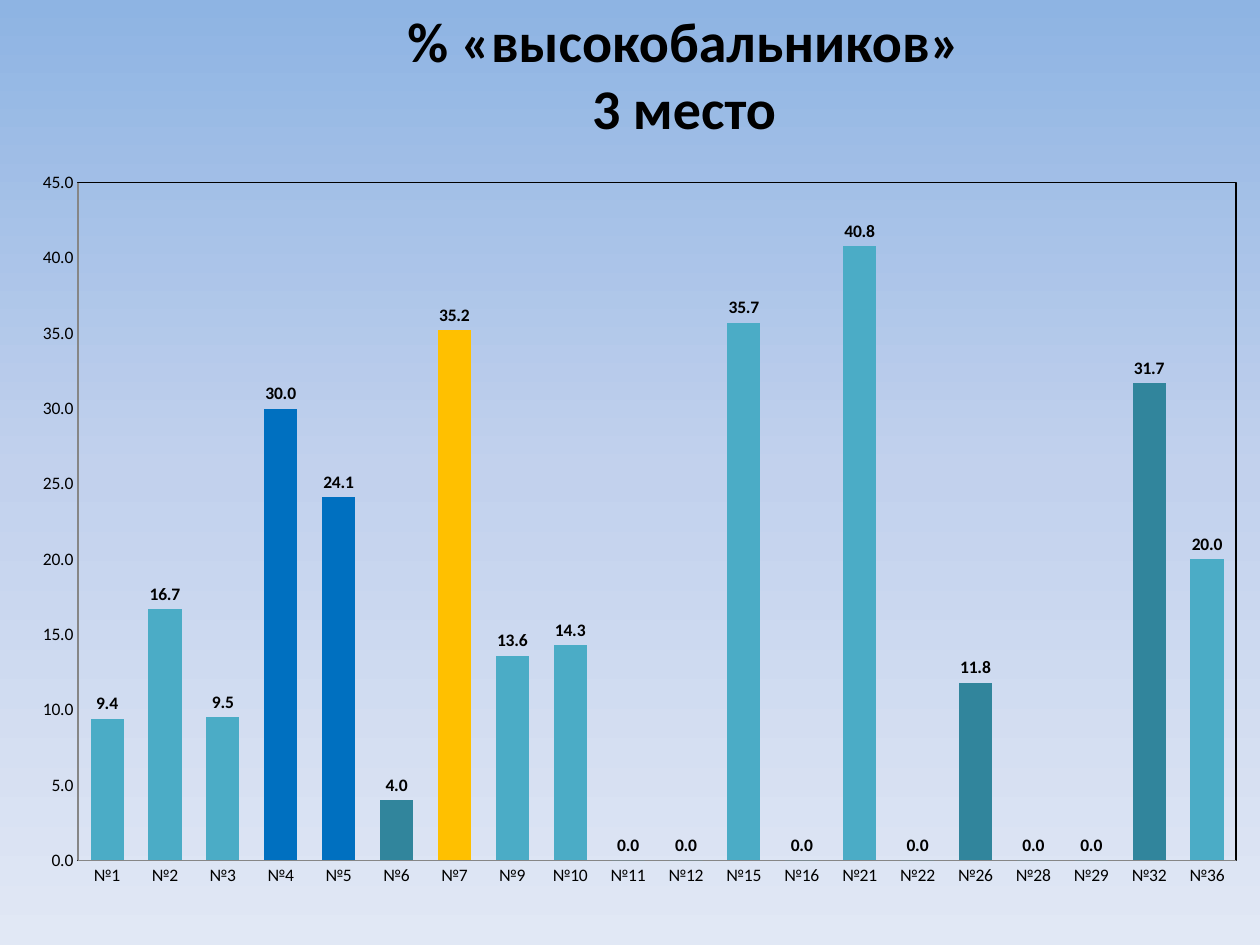
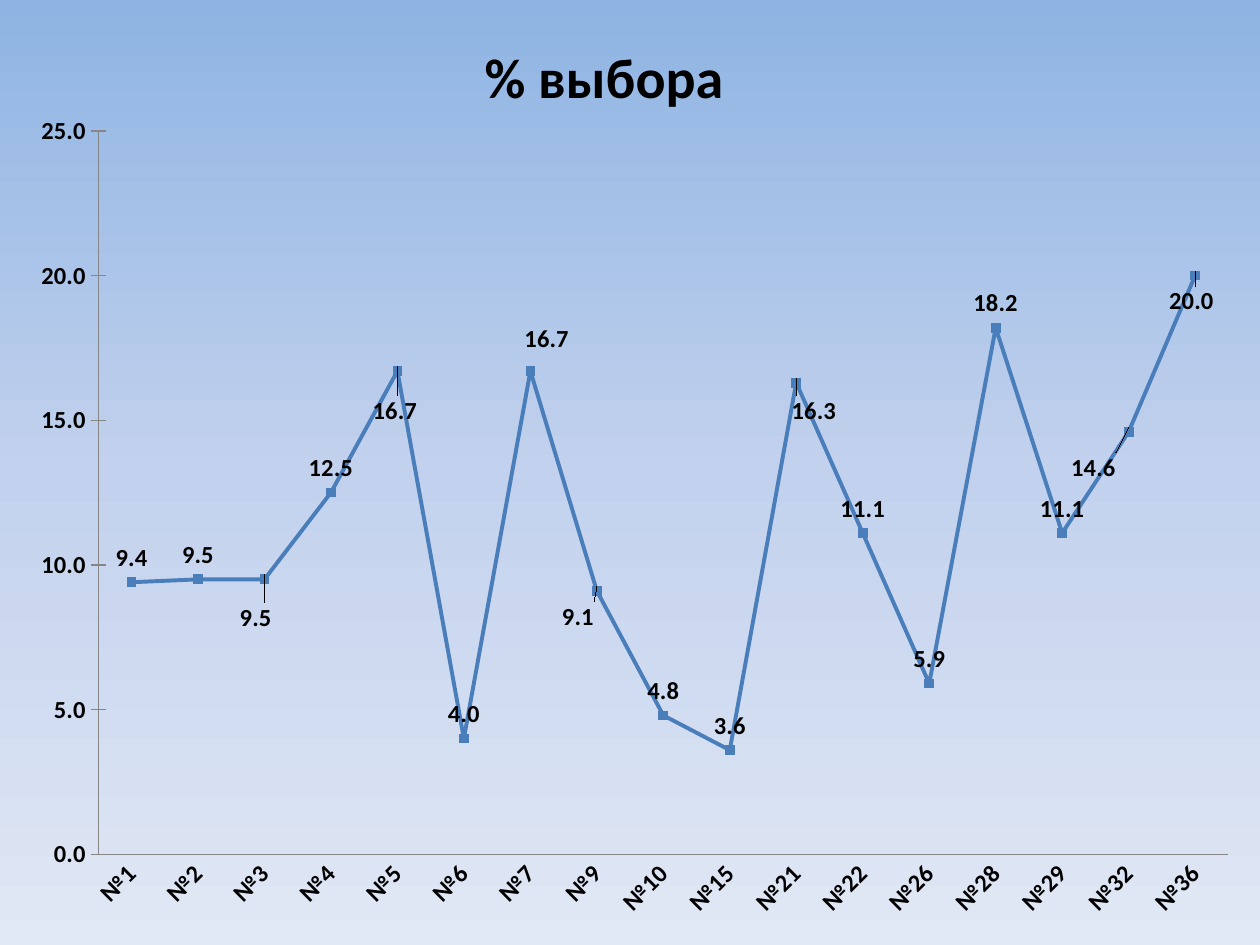
from copy import deepcopy
from dataclasses import dataclass, field

from lxml import etree
from pptx import Presentation
from pptx.chart.data import CategoryChartData
from pptx.dml.color import RGBColor
from pptx.enum import chart as ch, text
from pptx.oxml import parse_xml
from pptx.oxml.ns import nsdecls, qn
from pptx.util import Inches, Pt

FONT = "Calibri"
BLACK, AXIS_GREY = "000000", "868686"
TEAL, DARK_TEAL, BLUE, GOLD = "4BACC6", "31859C", "0070C0", "FFC000"
LINE_BLUE, MARKER_BLUE = "4A7EBB", "4F81BD"
SKY = [(0, "8EB4E3"), (0.5, "C2D1ED"), (1, "E1E8F5")]
NUMBER = "0.0"


@dataclass
class Box:
    x: float
    y: float
    w: float
    h: float

    def inches(self) -> list:
        return [Inches(v) for v in (self.x, self.y, self.w, self.h)]


@dataclass
class ChartSlide:
    title: list[str]
    title_box: Box
    chart_box: Box
    plot: Box  # inner plot area, in inches from the chart's corner
    kind: ch.XL_CHART_TYPE
    values: dict[int, float]  # school number -> percent
    maximum: float
    axis_size: int
    axis_bold: bool
    label_size: int
    label_pos: ch.XL_LABEL_POSITION
    val_tick: ch.XL_TICK_MARK
    point_colours: dict[int, str] = field(default_factory=dict)  # by school
    label_shifts: dict[int, tuple[float, float]] = field(default_factory=dict)


HIGH_SCORERS = ChartSlide(
    ["% «высокобальников»", "3 место"],
    Box(3.11, 0, 4.64, 1.18), Box(0, 1.15, 10, 6.35), Box(0.62, 0.3, 9.19, 5.38),
    ch.XL_CHART_TYPE.COLUMN_CLUSTERED,
    {1: 9.4, 2: 16.7, 3: 9.5, 4: 30, 5: 24.1, 6: 4, 7: 35.2, 9: 13.6, 10: 14.3, 11: 0,
     12: 0, 15: 35.7, 16: 0, 21: 40.8, 22: 0, 26: 11.8, 28: 0, 29: 0, 32: 31.7, 36: 20},
    45, 10, False, 10, ch.XL_LABEL_POSITION.OUTSIDE_END, ch.XL_TICK_MARK.NONE,
    point_colours={4: BLUE, 5: BLUE, 6: DARK_TEAL, 7: GOLD, 26: DARK_TEAL, 32: DARK_TEAL})

CHOICE = ChartSlide(
    ["% выбора"],
    Box(3.74, 0.29, 2.11, 0.64), Box(0, 0.92, 10, 6.58), Box(0.78, 0.11, 8.97, 5.75),
    ch.XL_CHART_TYPE.LINE_MARKERS_STACKED,
    {1: 9.4, 2: 9.5, 3: 9.5, 4: 12.5, 5: 16.7, 6: 4, 7: 16.7, 9: 9.1, 10: 4.8, 15: 3.6,
     21: 16.3, 22: 11.1, 26: 5.9, 28: 18.2, 29: 11.1, 32: 14.6, 36: 20},
    25, 14, True, 14, ch.XL_LABEL_POSITION.ABOVE, ch.XL_TICK_MARK.CROSS,
    label_shifts={3: (-0.07, 0.5), 5: (-0.02, 0.51), 7: (0.13, -0.06), 9: (-0.15, 0.4),
                  21: (0.14, 0.42), 32: (-0.28, 0.48), 36: (-0.03, 0.4)})


def rgb(colour: str) -> RGBColor:
    return RGBColor.from_string(colour)


def set_font(font, size: int, bold: bool = False) -> None:
    font.name, font.size, font.bold = FONT, Pt(size), bold
    font.color.rgb = rgb(BLACK)


def paint_background(s) -> None:
    fill = s.background.fill
    fill.gradient()
    fill.gradient_angle = 270
    stops = next(s._element.iter(qn("a:gsLst")))
    stops.append(deepcopy(stops[-1]))
    for stop, (position, colour) in zip(fill.gradient_stops, SKY):
        stop.position = position
        stop.color.rgb = rgb(colour)


def add_title(s, lines: list[str], box: Box) -> None:
    tf = s.shapes.add_textbox(*box.inches()).text_frame
    tf.word_wrap = False
    tf.auto_size = text.MSO_AUTO_SIZE.SHAPE_TO_FIT_TEXT
    tf.text = "\n".join(lines)
    for p in tf.paragraphs:
        p.alignment = text.PP_ALIGN.CENTER
        set_font(p.font, 32, True)


def manual_layout(**settings):
    layout = parse_xml(f"<c:layout {nsdecls('c')}><c:manualLayout/></c:layout>")
    for tag, value in settings.items():
        etree.SubElement(layout[0], qn(f"c:{tag}")).set("val", str(value))
    return layout


def place_plot(chart, plot: Box, box: Box) -> None:
    area = next(chart._chartSpace.iter(qn("c:plotArea")))
    for old in area.findall(qn("c:layout")):
        area.remove(old)
    area.insert(0, manual_layout(
        layoutTarget="inner", xMode="edge", yMode="edge",
        x=plot.x / box.w, y=plot.y / box.h, w=plot.w / box.w, h=plot.h / box.h))


def frame_plot(chart) -> None:
    """Draw a thin black border around the plot area."""
    next(chart._chartSpace.iter(qn("c:plotArea"))).append(parse_xml(
        f'<c:spPr {nsdecls("c", "a")}><a:noFill/><a:ln w="9525"><a:solidFill>'
        f'<a:srgbClr val="{BLACK}"/></a:solidFill></a:ln></c:spPr>'))


def style_axes(chart, d: ChartSlide) -> None:
    for axis in (chart.category_axis, chart.value_axis):
        axis.has_major_gridlines = False
        axis.major_tick_mark = axis.minor_tick_mark = ch.XL_TICK_MARK.NONE
        axis.format.line.color.rgb = rgb(AXIS_GREY)
        set_font(axis.tick_labels.font, d.axis_size, d.axis_bold)
    axis = chart.value_axis
    axis.major_tick_mark = d.val_tick
    axis.minimum_scale, axis.maximum_scale, axis.major_unit = 0, d.maximum, 5
    axis.tick_labels.number_format = NUMBER
    axis.tick_labels.number_format_is_linked = False


def add_labels(series, d: ChartSlide) -> None:
    labels = series.data_labels
    labels.show_value = True
    labels.number_format, labels.number_format_is_linked = NUMBER, False
    labels.position = d.label_pos
    set_font(labels.font, d.label_size, True)
    schools = list(d.values)
    for school, (dx, dy) in d.label_shifts.items():
        label = series.points[schools.index(school)].data_label
        label.position = d.label_pos
        set_font(label.font, d.label_size, True)
    for node, school in zip(series._element.iter(qn("c:dLbl")), d.label_shifts):
        dx, dy = d.label_shifts[school]
        node.insert(1, manual_layout(x=dx / d.chart_box.w, y=dy / d.chart_box.h))
        node.insert(2, parse_xml(
            f'<c:numFmt {nsdecls("c")} formatCode="{NUMBER}" sourceLinked="0"/>'))


def add_chart(s, d: ChartSlide):
    data = CategoryChartData(number_format=NUMBER)
    data.categories = [f"№{school}" for school in d.values]
    data.add_series("Series 1", d.values.values())
    chart = s.shapes.add_chart(d.kind, *d.chart_box.inches(), data).chart
    chart.has_title = chart.has_legend = False
    set_font(chart.font, 10)
    chart.plots[0].vary_by_categories = False
    place_plot(chart, d.plot, d.chart_box)
    style_axes(chart, d)
    add_labels(chart.series[0], d)
    return chart


def style_columns(chart, d: ChartSlide) -> None:
    chart.plots[0].gap_width = 75
    series, schools = chart.series[0], list(d.values)
    series.invert_if_negative = False
    series.format.fill.solid()
    series.format.fill.fore_color.rgb = rgb(TEAL)
    for school, colour in d.point_colours.items():
        fill = series.points[schools.index(school)].format.fill
        fill.solid()
        fill.fore_color.rgb = rgb(colour)
    frame_plot(chart)


def style_line(chart) -> None:
    series = chart.series[0]
    series.smooth = False
    series.format.line.width = Pt(2.25)
    series.format.line.color.rgb = rgb(LINE_BLUE)
    marker = series.marker
    marker.style, marker.size = ch.XL_MARKER_STYLE.SQUARE, 5
    marker.format.fill.solid()
    marker.format.fill.fore_color.rgb = rgb(MARKER_BLUE)
    marker.format.line.color.rgb = rgb(LINE_BLUE)
    labels_text = chart.category_axis._element.find(qn("c:txPr"))
    labels_text.find(qn("a:bodyPr")).set("rot", "-2700000")


def add_slide(prs, d: ChartSlide):
    s = prs.slides.add_slide(prs.slide_layouts[6])
    paint_background(s)
    add_title(s, d.title, d.title_box)
    return add_chart(s, d)


def main() -> None:
    prs = Presentation()
    prs.slide_width, prs.slide_height = Inches(10), Inches(7.5)
    style_columns(add_slide(prs, HIGH_SCORERS), HIGH_SCORERS)
    style_line(add_slide(prs, CHOICE))
    prs.save("out.pptx")


if __name__ == "__main__":
    main()
